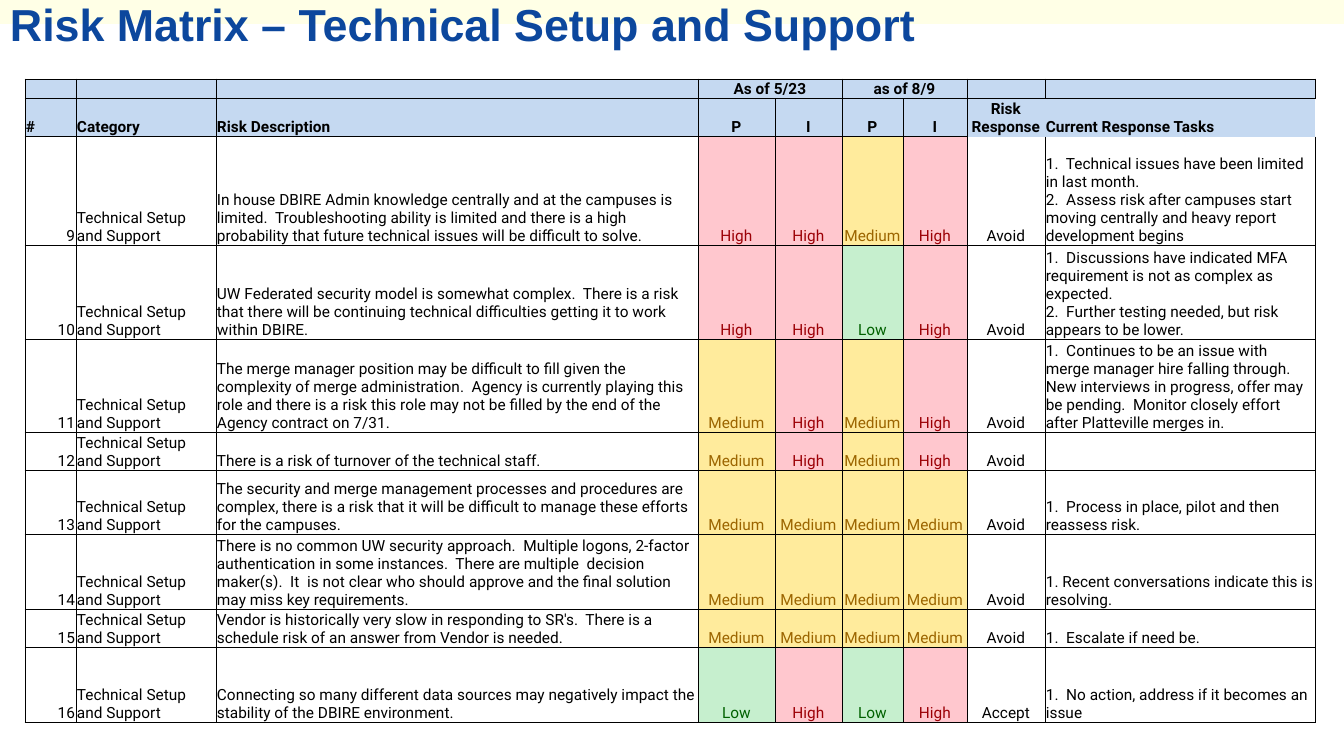
from dataclasses import dataclass

from lxml import etree
from pptx import Presentation
from pptx.dml.color import RGBColor
from pptx.enum.shapes import MSO_SHAPE
from pptx.enum.text import MSO_ANCHOR, PP_ALIGN
from pptx.oxml.ns import qn
from pptx.slide import Slide
from pptx.table import Table, _Cell
from pptx.util import Pt

LEFT, CENTER, RIGHT = PP_ALIGN.LEFT, PP_ALIGN.CENTER, PP_ALIGN.RIGHT
BOTTOM = MSO_ANCHOR.BOTTOM
RECTANGLE = MSO_SHAPE.RECTANGLE

EMU_PER_PX = 9071.43
SLIDE_WIDTH, SLIDE_HEIGHT = 1344, 756
TABLE_LEFT, TABLE_TOP = 25, 79
COLUMN_WIDTHS = [51, 140, 482, 77, 67, 61, 64, 78, 270]
ROW_HEIGHTS = [18, 37, 109, 90, 91, 37, 64, 73, 36, 75]
COLUMN_ALIGNMENTS = [RIGHT, LEFT, LEFT] + [CENTER] * 5 + [LEFT]
TABLE_FONT, TABLE_SIZE = "Roboto", 11
BORDER_WIDTH = Pt(0.5)

COLORS = {
    "band": "FFFFE6",
    "title": "0C479D",
    "header": "C5D9F1",
    "ink": "000000",
    "High fill": "FFC7CE",
    "High text": "9C0006",
    "Medium fill": "FFEB9C",
    "Medium text": "9C6500",
    "Low fill": "C6EFCE",
    "Low text": "006100",
}

RATING_PERIODS = {3: "As of 5/23", 5: "as of 8/9"}
HEADINGS = ["#", "Category", "Risk Description", "P", "I", "P", "I",
            "Risk Response", "Current Response Tasks"]
CATEGORY = "Technical Setup and Support"
FIRST_NUMBER = 9
HEADER_ROWS = 2

# Cells, by row and column, that are not framed on all four sides
PARTIAL_BORDERS = {(1, 7): "LT", (1, 8): "T", (2, 7): "LRB", (2, 8): "LRB"}


@dataclass(frozen=True)
class Risk:
    description: str
    ratings: tuple[str, str, str, str]
    tasks: str
    response: str = "Avoid"


RISKS = [
    Risk("In house DBIRE Admin knowledge centrally and at the campuses is limited.  "
         "Troubleshooting ability is limited and there is a high probability that "
         "future technical issues will be difficult to solve.",
         ("High", "High", "Medium", "High"),
         "1.  Technical issues have been limited in last month.\n"
         "2.  Assess risk after campuses start moving centrally and heavy report "
         "development begins"),
    Risk("UW Federated security model is somewhat complex.  There is a risk that there "
         "will be continuing technical difficulties getting it to work within DBIRE.",
         ("High", "High", "Low", "High"),
         "1.  Discussions have indicated MFA requirement is not as complex as expected.\n"
         "2.  Further testing needed, but risk appears to be lower."),
    Risk("The merge manager position may be difficult to fill given the complexity of "
         "merge administration.  Agency is currently playing this role and there is a "
         "risk this role may not be filled by the end of the Agency contract on 7/31.",
         ("Medium", "High", "Medium", "High"),
         "1.  Continues to be an issue with merge manager hire falling through.  New "
         "interviews in progress, offer may be pending.  Monitor closely effort after "
         "Platteville merges in."),
    Risk("There is a risk of turnover of the technical staff.",
         ("Medium", "High", "Medium", "High"), ""),
    Risk("The security and merge management processes and procedures are complex, there "
         "is a risk that it will be difficult to manage these efforts for the campuses.",
         ("Medium", "Medium", "Medium", "Medium"),
         "1.  Process in place, pilot and then reassess risk."),
    Risk("There is no common UW security approach.  Multiple logons, 2-factor "
         "authentication in some instances.  There are multiple  decision maker(s).  "
         "It  is not clear who should approve and the final solution may miss key "
         "requirements.",
         ("Medium", "Medium", "Medium", "Medium"),
         "1. Recent conversations indicate this is resolving."),
    Risk("Vendor is historically very slow in responding to SR's.  There is a schedule "
         "risk of an answer from Vendor is needed.",
         ("Medium", "Medium", "Medium", "Medium"),
         "1.  Escalate if need be."),
    Risk("Connecting so many different data sources may negatively impact the stability "
         "of the DBIRE environment.",
         ("Low", "High", "Low", "High"),
         "1.  No action, address if it becomes an issue", "Accept"),
]


def px(length: int) -> int:
    return round(length * EMU_PER_PX)


def rgb(color: str) -> RGBColor:
    return RGBColor.from_string(COLORS[color])


def add_band(slide: Slide) -> None:
    band = slide.shapes.add_shape(RECTANGLE, 0, 0, px(SLIDE_WIDTH), px(24))
    band.shadow.inherit = False
    band.fill.solid()
    band.fill.fore_color.rgb = rgb("band")
    band.line.fill.background()


def add_title(slide: Slide) -> None:
    frame = slide.shapes.add_textbox(0, 0, px(1197), px(57)).text_frame
    frame.word_wrap = True
    frame.text = "Risk Matrix – Technical Setup and Support"
    title = frame.paragraphs[0]
    title.line_spacing = 0.85
    font = title.runs[0].font
    font.name, font.size, font.bold = "Arial", Pt(32), True
    font.color.rgb = rgb("title")


def set_borders(cell: _Cell, sides: str) -> None:
    properties = cell._tc.get_or_add_tcPr()
    for side in "LRTB":
        line = etree.SubElement(properties, qn(f"a:ln{side}"), w=str(BORDER_WIDTH))
        if side in sides:
            fill = etree.SubElement(line, qn("a:solidFill"))
            etree.SubElement(fill, qn("a:srgbClr"), val=COLORS["ink"])
        else:
            etree.SubElement(line, qn("a:noFill"))


def set_cell(cell: _Cell, text: str, align: PP_ALIGN, sides: str, bold: bool,
             fill: str | None, ink: str) -> None:
    set_borders(cell, sides)
    if fill:
        cell.fill.solid()
        cell.fill.fore_color.rgb = rgb(fill)
    else:
        cell.fill.background()
    cell.margin_left = cell.margin_right = cell.margin_top = px(1)
    cell.margin_bottom = 0
    cell.vertical_anchor = BOTTOM
    cell.text_frame.text = text
    for paragraph in cell.text_frame.paragraphs:
        paragraph.alignment = align
        for run in paragraph.runs:
            font = run.font
            font.name, font.size, font.bold = TABLE_FONT, Pt(TABLE_SIZE), bold
            font.color.rgb = rgb(ink)
        # Keeps empty cells from stretching their row
        etree.SubElement(paragraph._p, qn("a:endParaRPr"), sz=str(TABLE_SIZE * 100))


def fill_table(table: Table) -> None:
    periods = [RATING_PERIODS.get(column, "") for column in range(len(COLUMN_WIDTHS))]
    risk_rows = [
        [str(number), CATEGORY, risk.description, *risk.ratings, risk.response, risk.tasks]
        for number, risk in enumerate(RISKS, FIRST_NUMBER)
    ]
    for row, texts in enumerate([periods, HEADINGS, *risk_rows]):
        is_header = row < HEADER_ROWS
        for column, text in enumerate(texts):
            align = COLUMN_ALIGNMENTS[column]
            fill, ink = None, "ink"
            if is_header:
                align = LEFT if column == 0 else align
                fill = "header"
            elif f"{text} fill" in COLORS:
                fill, ink = f"{text} fill", f"{text} text"
            sides = PARTIAL_BORDERS.get((row, column), "LRTB")
            set_cell(table.cell(row, column), text, align, sides, is_header, fill, ink)
    for column in RATING_PERIODS:
        table.cell(0, column).merge(table.cell(0, column + 1))


def add_risk_matrix(slide: Slide) -> None:
    table = slide.shapes.add_table(
        len(ROW_HEIGHTS), len(COLUMN_WIDTHS), px(TABLE_LEFT), px(TABLE_TOP),
        px(sum(COLUMN_WIDTHS)), px(sum(ROW_HEIGHTS))).table
    table.first_row = table.horz_banding = False
    for column, width in zip(table.columns, COLUMN_WIDTHS):
        column.width = px(width)
    for row, height in zip(table.rows, ROW_HEIGHTS):
        row.height = px(height)
    fill_table(table)


def main() -> None:
    presentation = Presentation()
    presentation.slide_width = px(SLIDE_WIDTH)
    presentation.slide_height = px(SLIDE_HEIGHT)
    slide = presentation.slides.add_slide(presentation.slide_layouts[6])
    add_band(slide)
    add_title(slide)
    add_risk_matrix(slide)
    presentation.save("out.pptx")


if __name__ == "__main__":
    main()
